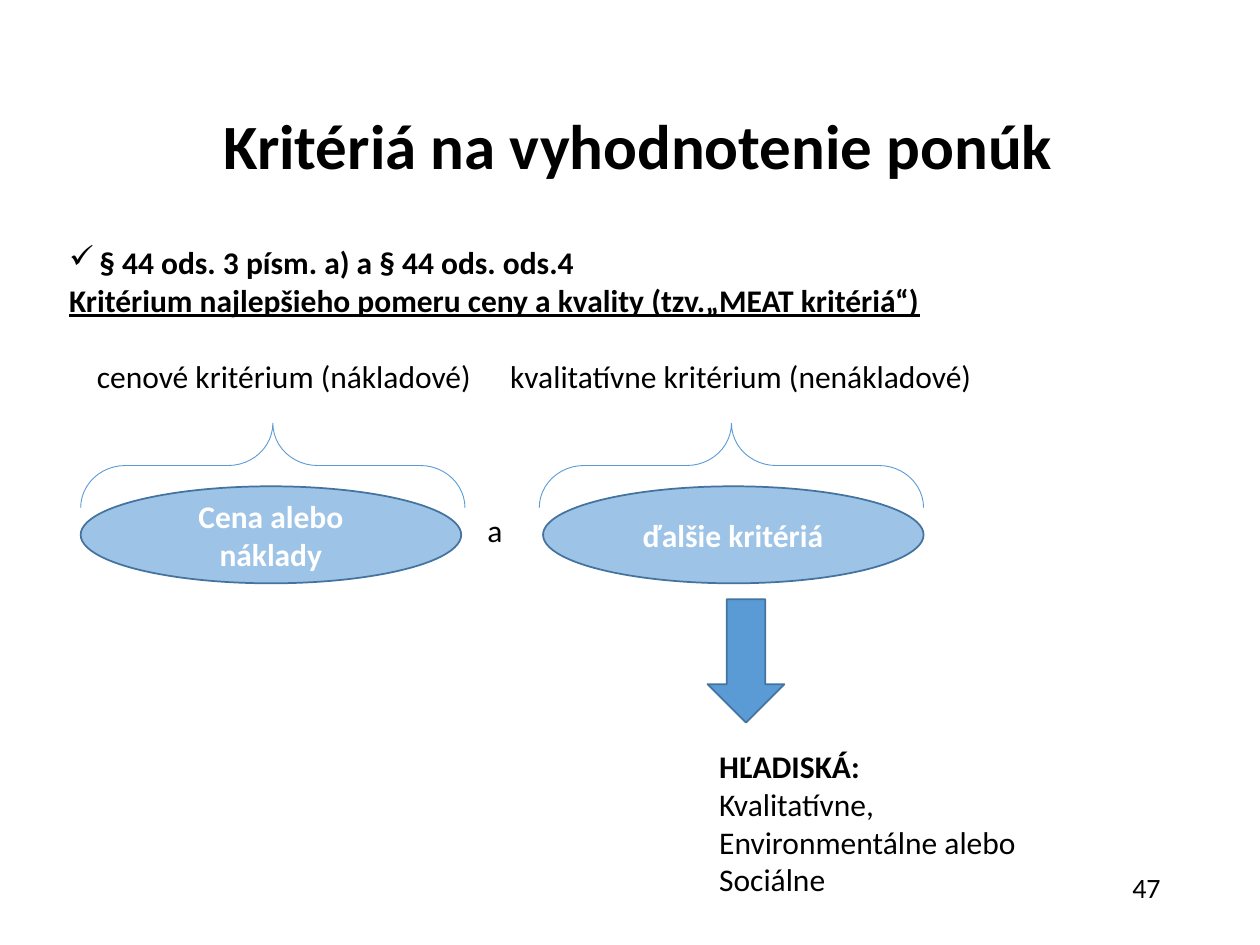
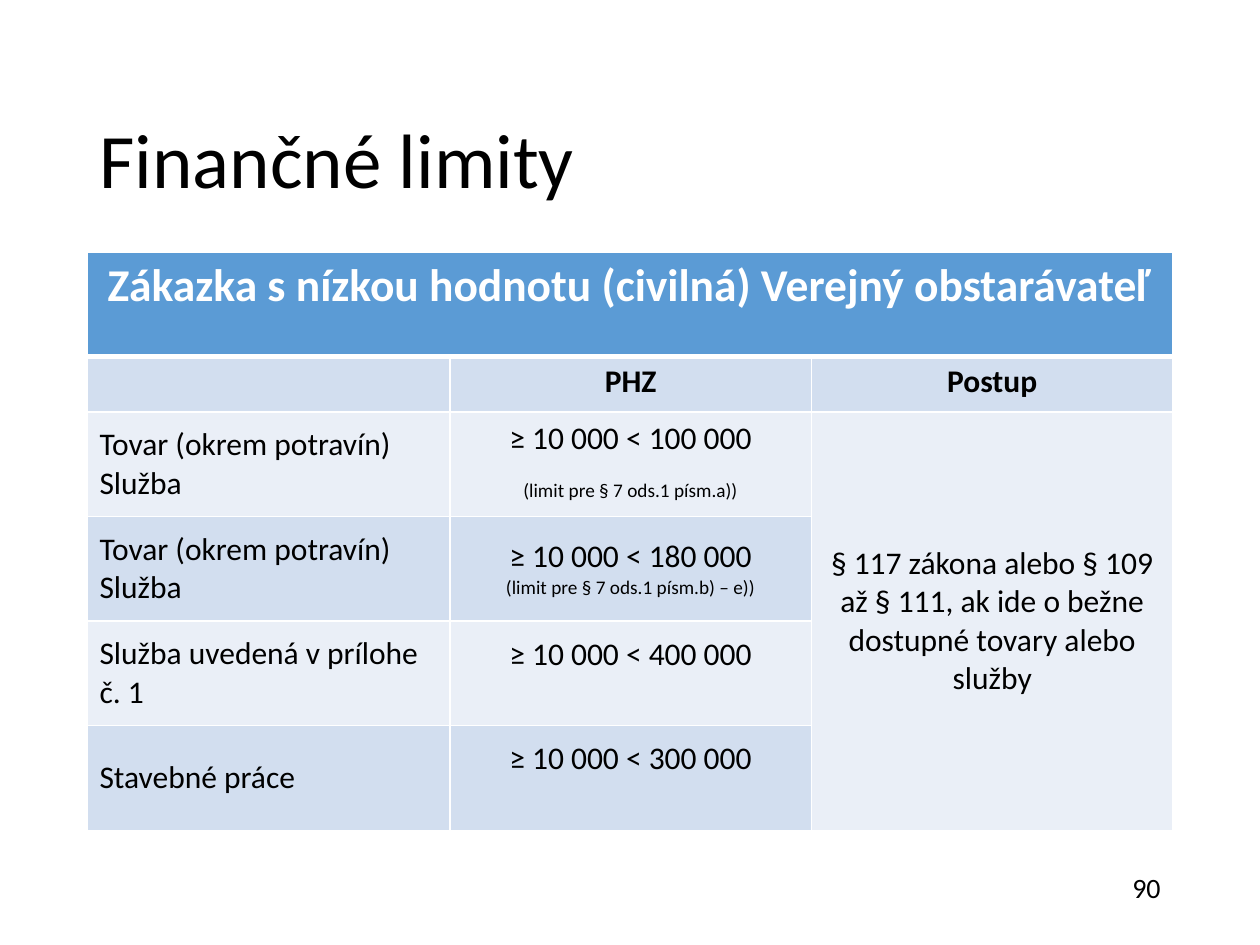
"""Build two slides on public procurement: evaluation criteria and financial limits."""
from dataclasses import dataclass

from lxml.etree import SubElement
from pptx import Presentation
from pptx.dml.color import RGBColor
from pptx.enum.shapes import MSO_SHAPE
from pptx.enum.text import MSO_ANCHOR, MSO_AUTO_SIZE, PP_ALIGN
from pptx.oxml import parse_xml
from pptx.oxml.ns import nsdecls, qn
from pptx.util import Pt

PX = 9144
FONT = "Calibri"
COLORS = {
    "text": "000000",
    "white": "FFFFFF",
    "accent": "5B9BD5",
    "outline": "43739E",
    "oval": "9DC3E6",
    "band_dark": "D2DEEF",
    "band_light": "EAEFF7",
}


@dataclass(frozen=True)
class Box:
    left: int
    top: int
    width: int
    height: int

    def emu(self) -> tuple[int, ...]:
        return tuple(v * PX for v in (self.left, self.top, self.width, self.height))


@dataclass(frozen=True)
class Line:
    text: str
    size: int = 18
    bold: bool = False
    underline: bool = False
    color: str = "text"
    align: PP_ALIGN = PP_ALIGN.LEFT
    before: float = 0
    bullet: str = ""
    margin: int = 0
    indent: int = 0
    tab: int = 0


@dataclass(frozen=True)
class Preset:
    kind: MSO_SHAPE
    box: Box
    fill: str = ""
    line: str = "outline"
    weight: float = 1
    rotation: int = 0
    adjustments: tuple[float, ...] = ()
    label: str = ""


@dataclass(frozen=True)
class Cell:
    row: int
    column: int
    lines: tuple[Line, ...]
    anchor: MSO_ANCHOR = MSO_ANCHOR.MIDDLE
    lift: int = 0


def rgb(name: str) -> RGBColor:
    return RGBColor.from_string(COLORS[name])


def write(frame, lines: tuple[Line, ...]) -> None:
    for index, line in enumerate(lines):
        paragraph = frame.add_paragraph() if index else frame.paragraphs[0]
        paragraph.alignment = line.align
        if line.before:
            paragraph.space_before = Pt(line.before)
        properties = paragraph._p.get_or_add_pPr()
        if line.margin or line.indent:
            properties.set("marL", str(line.margin * PX))
            properties.set("indent", str(line.indent * PX))
        if line.bullet:
            SubElement(properties, qn("a:buChar"), char=line.bullet)
        if line.tab:
            stops = SubElement(properties, qn("a:tabLst"))
            SubElement(stops, qn("a:tab"), pos=str(line.tab * PX), algn="l")
        paragraph.add_run().text = line.text
        font = paragraph.font
        font.name, font.size = FONT, Pt(line.size)
        font.bold, font.underline = line.bold, line.underline
        font.color.rgb = rgb(line.color)


def add_text(slide, box: Box, *lines: Line) -> None:
    frame = slide.shapes.add_textbox(*box.emu()).text_frame
    frame.word_wrap = True
    write(frame, lines)


def add_preset(slide, preset: Preset) -> None:
    shape = slide.shapes.add_shape(preset.kind, *preset.box.emu())
    shape.shadow.inherit = False
    shape.rotation = preset.rotation
    for index, value in enumerate(preset.adjustments):
        shape.adjustments[index] = value
    if preset.fill:
        shape.fill.solid()
        shape.fill.fore_color.rgb = rgb(preset.fill)
    else:
        shape.fill.background()
    shape.line.color.rgb = rgb(preset.line)
    shape.line.width = Pt(preset.weight)
    if preset.label:
        label = Line(preset.label, bold=True, color="white", align=PP_ALIGN.CENTER)
        write(shape.text_frame, (label,))


def start_slide(deck, title: Line, box: Box, number: str, lift: int = 0):
    slide = deck.slides.add_slide(deck.slide_layouts[5])
    heading = slide.shapes.title
    heading.left, heading.top, heading.width, heading.height = box.emu()
    frame = heading.text_frame
    frame.auto_size = MSO_AUTO_SIZE.NONE
    frame.vertical_anchor = MSO_ANCHOR.MIDDLE
    frame.margin_bottom = (5 + lift) * PX
    write(frame, (title,))
    frame.paragraphs[0].line_spacing = 0.9
    add_text(slide, Box(768, 686, 163, 37), Line(number, 16, align=PP_ALIGN.RIGHT))
    return slide


def build_criteria(deck) -> None:
    title = Line("Kritériá na vyhodnotenie ponúk", 36, bold=True, align=PP_ALIGN.CENTER)
    slide = start_slide(deck, title, Box(13, 78, 987, 110), "47", lift=30)
    add_text(
        slide,
        Box(45, 188, 955, 525),
        Line("§ 44 ods. 3 písm. a) a § 44 ods. ods.4", bold=True, bullet="✓",
             align=PP_ALIGN.JUSTIFY, margin=24, indent=-24),
        Line("Kritérium najlepšieho pomeru ceny a kvality (tzv.„MEAT kritériá“)",
             bold=True, underline=True),
        Line("cenové kritérium (nákladové)\tkvalitatívne kritérium (nenákladové)",
             before=22, indent=22, tab=381),
    )
    criteria = (("Cena alebo náklady", 64, 183), ("ďalšie kritériá", 431, 547))
    for label, oval_left, brace_left in criteria:
        add_preset(slide, Preset(MSO_SHAPE.OVAL, Box(oval_left, 386, 302, 77),
                                 "oval", label=label))
        add_preset(slide, Preset(MSO_SHAPE.LEFT_BRACE, Box(brace_left, 217, 67, 305),
                                 line="accent", weight=0.5, rotation=90,
                                 adjustments=(0.53, 0.5)))
    add_text(slide, Box(377, 401, 111, 40), Line("a"))
    add_preset(slide, Preset(MSO_SHAPE.RIGHT_ARROW, Box(543, 494, 98, 61),
                             "accent", rotation=90))
    add_text(
        slide,
        Box(561, 588, 340, 131),
        Line("HĽADISKÁ:", bold=True),
        *(Line(aspect) for aspect in ("Kvalitatívne,", "Environmentálne alebo", "Sociálne")),
    )


def set_borders(cell, row: int) -> None:
    weights = {"L": 1, "R": 1, "T": 3 if row == 1 else 1, "B": 3 if row == 0 else 1}
    properties = cell._tc.get_or_add_tcPr()
    for index, (side, weight) in enumerate(weights.items()):
        properties.insert(index, parse_xml(
            f'<a:ln{side} {nsdecls("a")} w="{Pt(weight)}"><a:solidFill>'
            f'<a:srgbClr val="{COLORS["white"]}"/></a:solidFill></a:ln{side}>'))


def build_limits(deck) -> None:
    slide = start_slide(deck, Line("Finančné limity", 44), Box(69, 75, 862, 110), "90")
    heights = (83, 44, 83, 83, 83, 83)
    table = slide.shapes.add_table(len(heights), 3, *Box(69, 200, 862, 459).emu()).table
    for row, height in zip(table.rows, heights):
        row.height = height * PX
    for column, width in zip(table.columns, (288, 287, 287)):
        column.width = width * PX
    for row in range(len(heights)):
        for column in range(3):
            cell = table.cell(row, column)
            band = "band_dark" if row % 2 else "band_light"
            cell.fill.solid()
            cell.fill.fore_color.rgb = rgb(band if row else "accent")
            set_borders(cell, row)
    table.cell(0, 0).merge(table.cell(0, 2))
    table.cell(2, 2).merge(table.cell(5, 2))

    center = PP_ALIGN.CENTER
    goods = (Line("Tovar (okrem potravín)"), Line("Služba"))
    cells = (
        Cell(0, 0, (Line("Zákazka s nízkou hodnotu (civilná) Verejný obstarávateľ",
                         26, True, color="white", align=center),), MSO_ANCHOR.TOP),
        Cell(1, 1, (Line("PHZ", bold=True, align=center),), MSO_ANCHOR.TOP),
        Cell(1, 2, (Line("Postup", bold=True, align=center),), MSO_ANCHOR.TOP),
        Cell(2, 0, goods),
        Cell(2, 1, (Line("≥ 10 000 < 100 000", align=center),
                    Line("(limit pre § 7 ods.1 písm.a))", 11, align=center, before=12.5)),
             lift=5),
        Cell(2, 2, (Line("§ 117 zákona alebo § 109 až § 111, ak ide o bežne "
                         "dostupné tovary alebo služby", align=center),)),
        Cell(3, 0, goods),
        Cell(3, 1, (Line("≥ 10 000 < 180 000", align=center),
                    Line("(limit pre § 7 ods.1 písm.b) – e))", 11, align=center))),
        Cell(4, 0, (Line("Služba uvedená v prílohe č. 1"),)),
        Cell(4, 1, (Line("≥ 10 000 < 400 000", align=center),), lift=30),
        Cell(5, 0, (Line("Stavebné práce"),)),
        Cell(5, 1, (Line("≥ 10 000 < 300 000", align=center),), lift=30),
    )
    for entry in cells:
        cell = table.cell(entry.row, entry.column)
        cell.vertical_anchor = entry.anchor
        cell.margin_bottom = (5 + entry.lift) * PX
        write(cell.text_frame, entry.lines)


def main() -> None:
    deck = Presentation()
    deck.slide_width, deck.slide_height = 1000 * PX, 750 * PX
    build_criteria(deck)
    build_limits(deck)
    deck.save("out.pptx")


if __name__ == "__main__":
    main()
